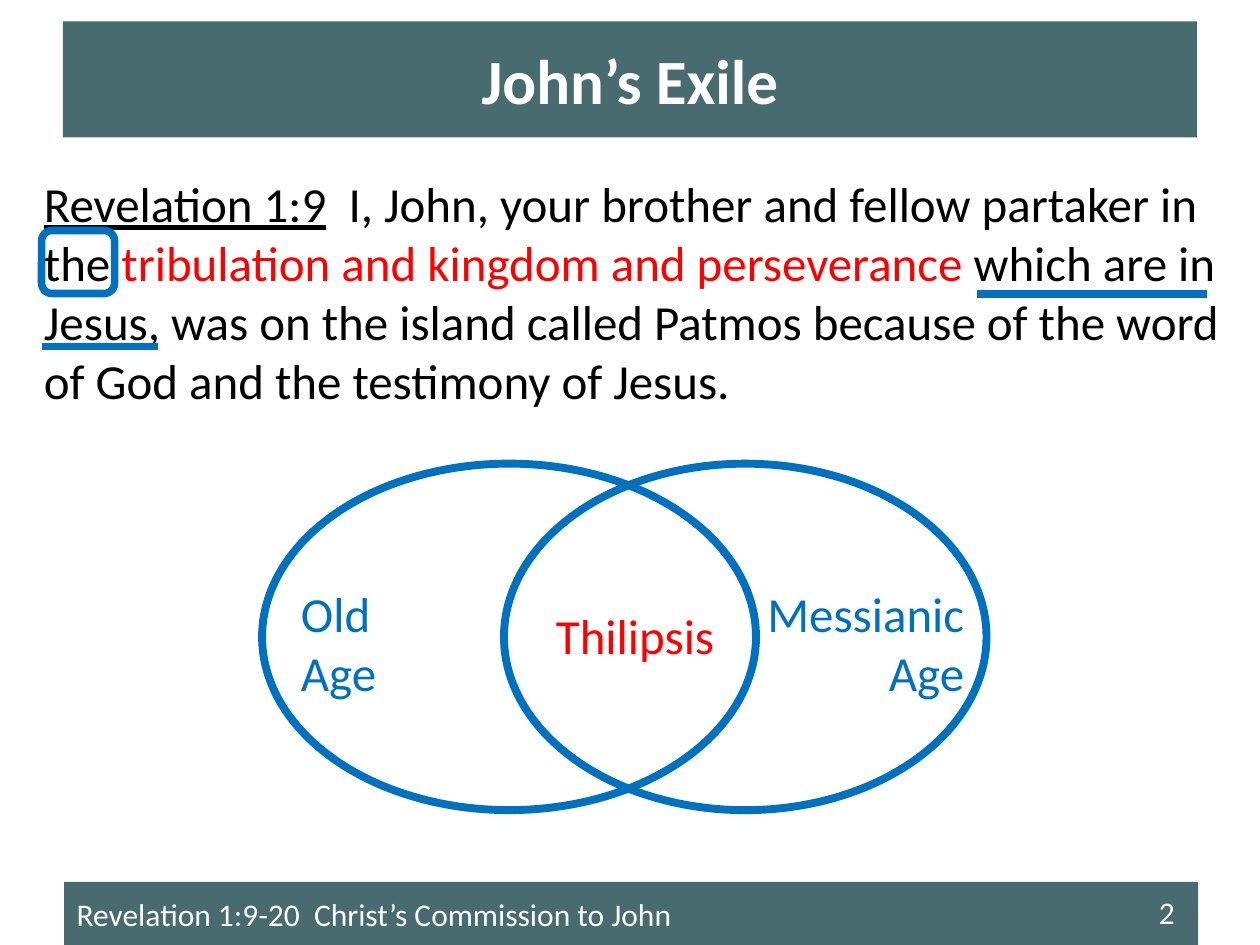
import pptx
import pptx.util
import pptx.dml.color
import pptx.enum.shapes
import pptx.enum.text
import pptx.oxml.ns
import lxml.etree

Inches = pptx.util.Inches
Pt = pptx.util.Pt
SHAPE = pptx.enum.shapes.MSO_SHAPE
ALIGN = pptx.enum.text.PP_ALIGN
ANCHOR = pptx.enum.text.MSO_ANCHOR

TEAL, BLUE, RED, BLACK, WHITE = "486B70", "0070C0", "FF0000", "000000", "FFFFFF"


def rgb(value):
    return pptx.dml.color.RGBColor.from_string(value)


class Deck:
    font = "Calibri"

    def __init__(self, s):
        self.s = s

    def add_runs(self, sp, runs, size, align=ALIGN.LEFT, anchor=ANCHOR.TOP, wrap=True):
        """Each run is (text, colour, style); style is '', 'b' or 'u'."""
        tf = sp.text_frame
        tf.word_wrap = wrap
        tf.vertical_anchor = anchor
        p = tf.paragraphs[0]
        p.alignment = align
        for text, color, style in runs:
            if text == "\n":
                p.add_line_break()
                continue
            r = p.add_run()
            r.text = text
            r.font.name = self.font
            r.font.size = Pt(size)
            r.font.color.rgb = rgb(color)
            r.font.bold = style == "b"
            r.font.underline = style == "u"

    def text(self, x, y, w, h, runs, size=28, **layout):
        sp = self.s.shapes.add_textbox(Inches(x), Inches(y), Inches(w), Inches(h))
        self.add_runs(sp, runs, size, **layout)

    def shape(self, kind, x, y, w, h):
        sp = self.s.shapes.add_shape(kind, Inches(x), Inches(y), Inches(w), Inches(h))
        sp.shadow.inherit = False
        return sp

    def bar(self, x, y, w, h, runs, size, align=ALIGN.LEFT):
        sp = self.shape(SHAPE.RECTANGLE, x, y, w, h)
        sp.fill.solid()
        sp.fill.fore_color.rgb = rgb(TEAL)
        sp.line.fill.background()
        self.add_runs(sp, runs, size, align, ANCHOR.MIDDLE)

    def outline(self, kind, x, y, w, h, weight=4.5):
        sp = self.shape(kind, x, y, w, h)
        sp.fill.background()
        sp.line.color.rgb = rgb(BLUE)
        sp.line.width = Pt(weight)

    def underline(self, x1, x2, y):
        cn = self.s.shapes.add_connector(
            pptx.enum.shapes.MSO_CONNECTOR.STRAIGHT,
            Inches(x1), Inches(y), Inches(x2), Inches(y))
        cn.line.color.rgb = rgb(BLUE)
        cn.line.width = Pt(4.5)
        lxml.etree.SubElement(cn._element.spPr, pptx.oxml.ns.qn("a:effectLst"))


def main():
    prs = pptx.Presentation()
    prs.slide_width, prs.slide_height = Inches(10), Inches(7.5)
    deck = Deck(prs.slides.add_slide(prs.slide_layouts[6]))

    # Footer
    deck.bar(0.51, 7, 9, 0.5,
             [("Revelation 1:9-20  Christ’s Commission to John", WHITE, "")], 18)
    deck.text(8.92, 7.04, 0.56, 0.4, [("2 ", WHITE, "")], 18,
              align=ALIGN.RIGHT, wrap=False)

    # Verse
    deck.text(0.25, 1.33, 9.58, 5.25, [
        ("Revelation 1:9", BLACK, "u"),
        ("  I, John, your brother and fellow partaker in the ", BLACK, ""),
        ("tribulation and kingdom and perseverance ", RED, ""),
        ("which are in Jesus, was on the island called Patmos because of "
         "the word of God and the testimony of Jesus.", BLACK, ""),
    ])

    # Title
    deck.bar(0.5, 0.17, 9, 0.92, [("John’s Exile", WHITE, "b")], 36, ALIGN.CENTER)

    # Marks on the verse
    deck.outline(SHAPE.ROUNDED_RECTANGLE, 0.33, 1.83, 0.58, 0.5, 4.33)
    deck.underline(7.75, 9.58, 2.33)
    deck.underline(0.33, 1.25, 2.75)

    # Overlapping ages
    for x, w in ((2.08, 3.92), (4, 3.83)):
        deck.outline(SHAPE.OVAL, x, 3.68, w, 2.75)
    deck.text(4.14, 4.76, 1.8, 0.57, [("Thilipsis", RED, "")], align=ALIGN.CENTER)
    deck.text(5.54, 4.58, 2.21, 1.04, [("Messianic Age", BLUE, "")], align=ALIGN.RIGHT)
    deck.text(2.29, 4.58, 2.21, 1.04,
              [("Old ", BLUE, ""), ("\n", BLUE, ""), ("Age", BLUE, "")])

    prs.save("out.pptx")


if __name__ == "__main__":
    main()
